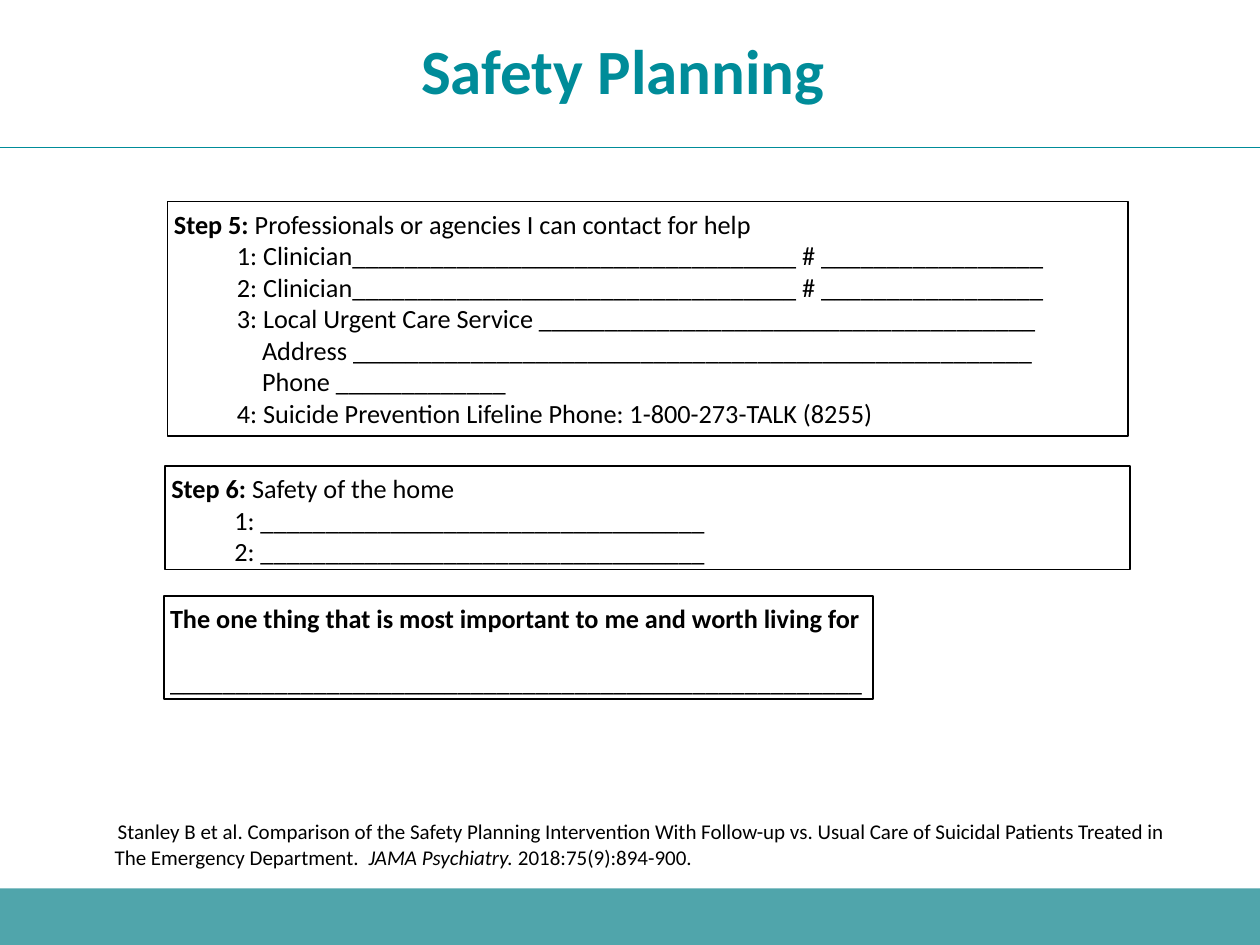
from dataclasses import dataclass

from pptx import Presentation
from pptx.dml.color import RGBColor
from pptx.enum.shapes import MSO_CONNECTOR, MSO_SHAPE
from pptx.enum.text import MSO_ANCHOR, MSO_AUTO_SIZE, PP_ALIGN
from pptx.oxml.ns import qn
from pptx.util import Inches, Pt

RECT, STRAIGHT = MSO_SHAPE.RECTANGLE, MSO_CONNECTOR.STRAIGHT
LEFT, CENTER = PP_ALIGN.LEFT, PP_ALIGN.CENTER
TOP, MIDDLE = MSO_ANCHOR.TOP, MSO_ANCHOR.MIDDLE
NO_FIT = MSO_AUTO_SIZE.NONE


@dataclass(frozen=True)
class Theme:
    font: str = "Calibri"
    teal: RGBColor = RGBColor(0x00, 0x8C, 0x99)
    band: RGBColor = RGBColor(0x50, 0xA5, 0xAB)
    ink: RGBColor = RGBColor(0, 0, 0)
    title: float = 36
    form: float = 15
    source: float = 12


THEME = Theme()
STEP_INDENT, SUB_INDENT = 0.5, 0.7


def place(sp, box):
    sp.left, sp.top, sp.width, sp.height = (Inches(v) for v in box)


def prepare_frame(sp, anchor=TOP, wrap=True):
    tf = sp.text_frame
    tf.auto_size, tf.word_wrap, tf.vertical_anchor = NO_FIT, wrap, anchor
    tf.margin_left = tf.margin_right = tf.margin_top = tf.margin_bottom = Inches(0.05)
    return tf


def add_paragraph(tf, first, align=LEFT, indent=0, before=0):
    """Return an unbulleted paragraph, reusing the frame's own for the first."""
    p = tf.paragraphs[0] if first else tf.add_paragraph()
    pPr = p._p.get_or_add_pPr()
    pPr.set("marL", str(Inches(indent)))
    pPr.set("indent", "0")
    pPr.append(pPr.makeelement(qn("a:buNone"), {}))
    p.alignment, p.space_before = align, Pt(before)
    return p


def add_run(p, text, size, color=THEME.ink, bold=False, italic=False):
    r = p.add_run()
    r.text = text
    f = r.font
    f.name, f.size, f.bold, f.italic = THEME.font, Pt(size), bold, italic
    f.color.rgb = color


def add_frame_art(s, rule_y, band_y, width, height):
    """Rule below the title and coloured band at the foot."""
    band = s.shapes.add_shape(RECT, 0, Inches(band_y), Inches(width), Inches(height - band_y))
    band.shadow.inherit = False
    band.fill.solid()
    band.fill.fore_color.rgb = THEME.band
    band.line.fill.background()
    rule = s.shapes.add_connector(STRAIGHT, 0, Inches(rule_y), Inches(width), Inches(rule_y))
    rule.line.color.rgb, rule.line.width = THEME.teal, Pt(0.5)
    spPr = rule._element.spPr
    spPr.append(spPr.makeelement(qn("a:effectLst"), {}))


def fill_title(sp, box, text):
    place(sp, box)
    p = add_paragraph(prepare_frame(sp, MIDDLE), True, CENTER)
    p.line_spacing = 0.9
    add_run(p, text, THEME.title, THEME.teal, bold=True)


def fill_form(sp, box, heading, rest="", lines=(), gap=0, wrap=True):
    """Outlined form box: bold heading, then (indent, text) lines."""
    place(sp, box)
    sp.line.color.rgb, sp.line.width = THEME.ink, Pt(1)
    tf = prepare_frame(sp, wrap=wrap)
    p = add_paragraph(tf, True)
    add_run(p, heading, THEME.form, bold=True)
    if rest:
        add_run(p, rest, THEME.form)
    for indent, text in lines:
        add_run(add_paragraph(tf, False, indent=indent, before=gap), text, THEME.form)


def add_box(s):
    return s.shapes.add_textbox(0, 0, 0, 0)


def add_citation(s, box):
    sp = add_box(s)
    place(sp, box)
    tf = prepare_frame(sp)
    add_run(add_paragraph(tf, True, CENTER),
            "Stanley B et al. Comparison of the Safety Planning Intervention With "
            "Follow-up vs. Usual Care of Suicidal Patients Treated in ", THEME.source)
    p = add_paragraph(tf, False)
    add_run(p, "The Emergency Department.  ", THEME.source)
    add_run(p, "JAMA Psychiatry. ", THEME.source, italic=True)
    add_run(p, "2018:75(9):894-900.", THEME.source)


def main():
    prs = Presentation()
    prs.slide_width, prs.slide_height = Inches(10), Inches(7.5)
    s = prs.slides.add_slide(prs.slide_layouts[1])
    add_frame_art(s, 1.17, 7.05, 10, 7.5)
    fill_title(s.shapes.title, (0, 0, 10, 1.17), "Safety Planning ")

    clinician = "Clinician" + "_" * 34 + " # " + "_" * 17
    fill_form(s.placeholders[1], (1.33, 1.6, 7.62, 1.86),
              "Step 5:", " Professionals or agencies I can contact for help", [
                  (STEP_INDENT, "1: " + clinician),
                  (STEP_INDENT, "2: " + clinician),
                  (STEP_INDENT, "3: Local Urgent Care Service " + "_" * 38),
                  (SUB_INDENT, "Address " + "_" * 52),
                  (SUB_INDENT, "Phone " + "_" * 13),
                  (STEP_INDENT, "4: Suicide Prevention Lifeline Phone: 1-800-273-TALK (8255)"),
              ])
    fill_form(add_box(s), (1.31, 3.7, 7.66, 0.82), "Step 6:", " Safety of the home",
              [(STEP_INDENT, f"{n}: " + "_" * 34) for n in (1, 2)])
    fill_form(add_box(s), (1.3, 4.73, 5.63, 0.82),
              "The one thing that is most important to me and worth living for",
              lines=[(0, "_" * 53)], gap=18, wrap=False)
    add_citation(s, (0.86, 6.45, 8.5, 0.5))
    prs.save("out.pptx")


if __name__ == "__main__":
    main()
